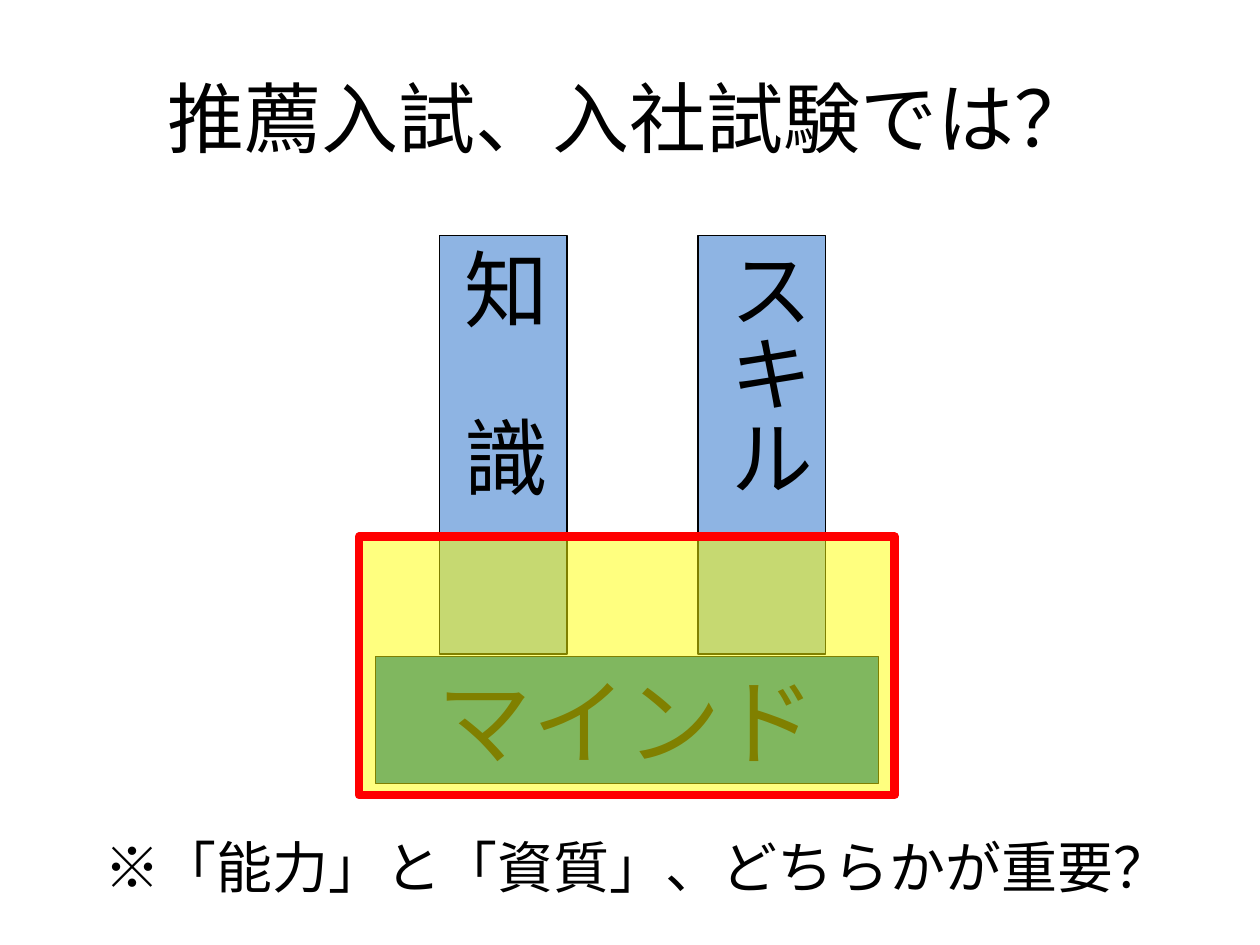
from pptx import Presentation
from pptx.dml.color import RGBColor
from pptx.enum.shapes import MSO_SHAPE as Preset
from pptx.enum.text import MSO_ANCHOR as Anchor, PP_ALIGN as Align
from pptx.oxml.ns import qn
from pptx.util import Inches, Pt
from lxml.etree import SubElement

EAST_ASIAN = "Noto Sans CJK JP"
PILLAR_TOP, PILLAR_WIDTH, PILLAR_HEIGHT = 1.87, 1.01, 3.32

BASE = ("マインド", (2.98, 5.21, 3.99, 1.01), "0070C0", 54)
PILLARS = [
    ("知\u3000識", 3.49, Anchor.MIDDLE),
    ("スキル", 5.54, Anchor.TOP),
]
HIGHLIGHT = (2.85, 4.26, 4.25, 2.05)
CAPTIONS = [
    ("推薦入試、入社試験では？", (0.5, 0.3, 9, 1.25), 44, Anchor.MIDDLE),
    ("※「能力」と「資質」、どちらかが重要？", (0.12, 6.56, 9.88, 0.64), 32, Anchor.TOP),
]


def color(value):
    return RGBColor.from_string(value)


def set_all(target, values):
    for name, value in values.items():
        setattr(target, name, value)


def add_rect(shapes, area, fill, line="000000", width=0.75):
    box = shapes.add_shape(Preset.RECTANGLE, *map(Inches, area))
    box.shadow.inherit = False
    box.fill.solid()
    box.fill.fore_color.rgb = color(fill)
    box.line.color.rgb = color(line)
    box.line.width = Pt(width)
    return box


def write(box, text, size, font=EAST_ASIAN, anchor=Anchor.MIDDLE, align=Align.CENTER):
    set_all(box.text_frame, {"word_wrap": True, "vertical_anchor": anchor})
    para = box.text_frame.paragraphs[0]
    para.alignment = align
    span = para.add_run()
    span.text = text
    set_all(span.font, {"size": Pt(size), "name": font})
    span.font.color.rgb = color("000000")
    SubElement(span.font._element, qn("a:ea"), typeface=EAST_ASIAN)


def main():
    deck = Presentation()
    set_all(deck, {"slide_width": Inches(10), "slide_height": Inches(7.5)})
    page = deck.slides.add_slide(deck.slide_layouts[6])

    diagram = page.shapes.add_group_shape().shapes
    text, area, fill, size = BASE
    write(add_rect(diagram, area, fill), text, size)
    for text, left, anchor in PILLARS:
        area = (left, PILLAR_TOP, PILLAR_WIDTH, PILLAR_HEIGHT)
        pillar = add_rect(diagram, area, "8EB4E3")
        write(pillar, text, 48, anchor=anchor, align=Align.LEFT)
        pillar.text_frame._txBody.bodyPr.set("vert", "eaVert")

    (title, title_area, title_size, title_anchor), *notes = CAPTIONS
    highlight_after = page.shapes.add_textbox(*map(Inches, title_area))
    write(highlight_after, title, title_size, "Cabin", title_anchor)

    highlight = add_rect(page.shapes, HIGHLIGHT, "FFFF00", "FF0000", 5)
    tint = highlight.fill._xPr.find(qn("a:solidFill"))[0]
    SubElement(tint, qn("a:alpha"), val="50000")

    for text, area, size, anchor in notes:
        box = page.shapes.add_textbox(*map(Inches, area))
        write(box, text, size, "Cabin", anchor)

    deck.save("out.pptx")


if __name__ == "__main__":
    main()
